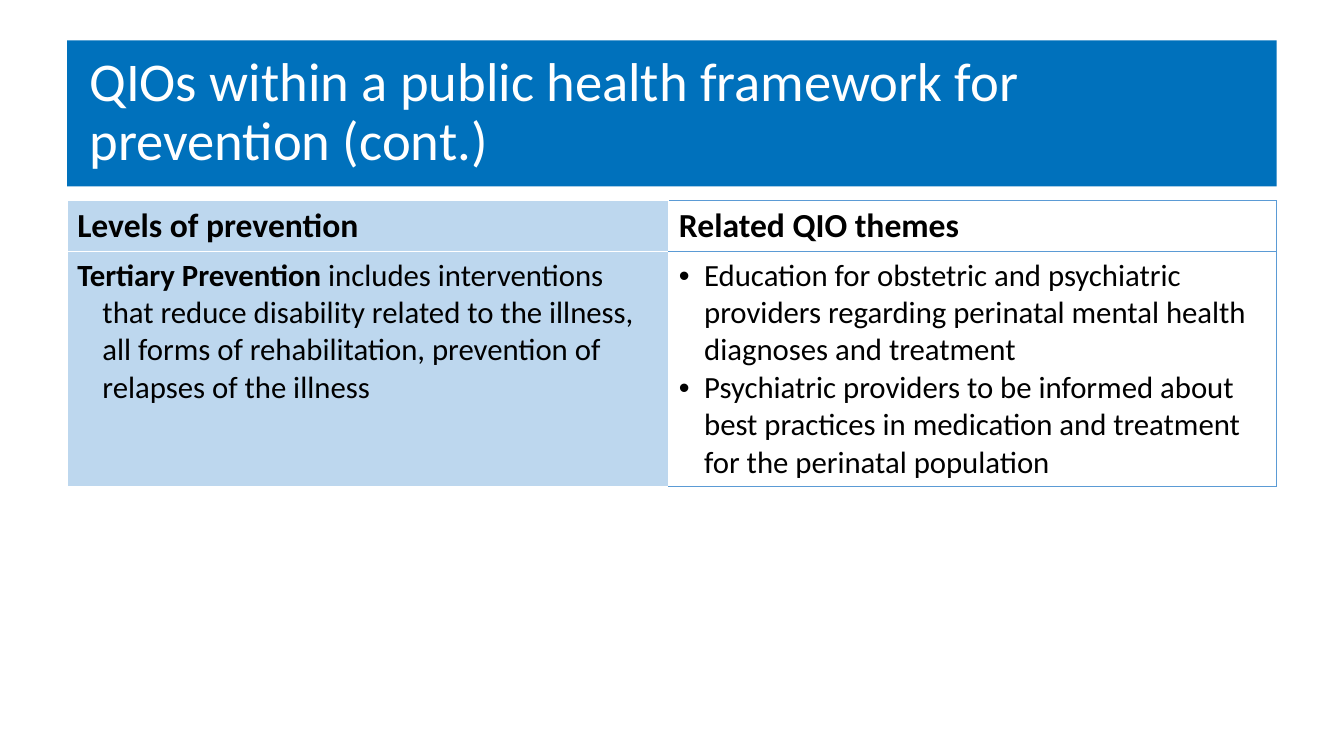
from dataclasses import dataclass

import lxml.etree
import pptx
import pptx.dml.color
import pptx.enum.text
import pptx.oxml.ns
import pptx.util

Pt = pptx.util.Pt
qn = pptx.oxml.ns.qn


@dataclass(frozen=True)
class Theme:
    """Colours, font and type sizes of the slide."""
    font: str = "Calibri"
    banner: str = "0071BC"
    panel: str = "BDD7EE"
    outline: str = "5B9BD5"
    light: str = "FFFFFF"
    dark: str = "000000"
    title_size: int = 39
    header_size: int = 24
    body_size: int = 22
    indent: int = 18


THEME = Theme()
TITLE = "QIOs within a public health framework for prevention (cont.)"
HEADERS = ["Levels of prevention", "Related QIO themes"]
LEVEL = [
    ("Tertiary Prevention ", True),
    ("includes interventions that reduce disability related to the illness, "
     "all forms of rehabilitation, prevention of relapses of the illness", False),
]
THEMES = [
    "Education for obstetric and psychiatric providers regarding perinatal "
    "mental health diagnoses and treatment",
    "Psychiatric providers to be informed about best practices in medication "
    "and treatment for the perinatal population",
]


def rgb(value):
    """Turn a hex string into a colour."""
    return pptx.dml.color.RGBColor.from_string(value)


def add_run(paragraph, text, size, color=THEME.dark, bold=False):
    """Add one formatted run to a paragraph."""
    run = paragraph.add_run()
    run.text = text
    run.font.name = THEME.font
    run.font.size = Pt(size)
    run.font.bold = bold
    run.font.color.rgb = rgb(color)


def indent(paragraph, left, first=0, bullet=None):
    """Set the paragraph's indents and an optional bullet."""
    properties = paragraph._p.get_or_add_pPr()
    properties.set("marL", str(Pt(left)))
    properties.set("indent", str(Pt(first)))
    if bullet:
        lxml.etree.SubElement(properties, qn("a:buFont")).set("typeface", "Arial")
        lxml.etree.SubElement(properties, qn("a:buChar")).set("char", bullet)


def style_cell(cell, fill, outline):
    """Draw the borders of a cell, white on its left side, and fill it."""
    properties = cell._tc.get_or_add_tcPr()
    sides = {"L": THEME.light, "R": outline, "T": outline, "B": outline}
    for side, color in sides.items():
        line = lxml.etree.SubElement(properties, qn(f"a:ln{side}"), w=str(Pt(1)))
        solid = lxml.etree.SubElement(line, qn("a:solidFill"))
        lxml.etree.SubElement(solid, qn("a:srgbClr"), val=color)
    cell.fill.solid()
    cell.fill.fore_color.rgb = rgb(fill)


def add_title(slide, left, top, width, height):
    """Place the title placeholder as a coloured banner."""
    title = slide.shapes.title
    title.left, title.top, title.width, title.height = map(Pt, (left, top, width, height))
    title.fill.solid()
    title.fill.fore_color.rgb = rgb(THEME.banner)
    frame = title.text_frame
    frame.word_wrap = True
    frame.auto_size = pptx.enum.text.MSO_AUTO_SIZE.NONE
    frame.vertical_anchor = pptx.enum.text.MSO_ANCHOR.MIDDLE
    paragraph = frame.paragraphs[0]
    paragraph.alignment = pptx.enum.text.PP_ALIGN.LEFT
    paragraph.line_spacing = 0.9
    indent(paragraph, 8.64)
    add_run(paragraph, TITLE, THEME.title_size, THEME.light)


def add_prevention_table(slide, left, top, width, height):
    """Place the table of prevention levels and related themes."""
    table = slide.shapes.add_table(2, 2, *map(Pt, (left, top, width, height))).table
    level_width, header_height = 429.8, 36.5
    table.columns[0].width = Pt(level_width)
    table.columns[1].width = Pt(width - level_width)
    table.rows[0].height = Pt(header_height)
    table.rows[1].height = Pt(height - header_height)
    for row in range(2):
        style_cell(table.cell(row, 0), THEME.panel, THEME.light)
        style_cell(table.cell(row, 1), THEME.light, THEME.outline)
    for column, header in enumerate(HEADERS):
        paragraph = table.cell(0, column).text_frame.paragraphs[0]
        add_run(paragraph, header, THEME.header_size, bold=True)

    paragraph = table.cell(1, 0).text_frame.paragraphs[0]
    indent(paragraph, THEME.indent, -THEME.indent)
    for text, bold in LEVEL:
        add_run(paragraph, text, THEME.body_size, bold=bold)

    frame = table.cell(1, 1).text_frame
    for index, text in enumerate(THEMES):
        paragraph = frame.add_paragraph() if index else frame.paragraphs[0]
        indent(paragraph, THEME.indent, -THEME.indent, "•")
        add_run(paragraph, text, THEME.body_size)


def main():
    """Build the slide and save it."""
    presentation = pptx.Presentation()
    presentation.slide_width = Pt(960)
    presentation.slide_height = Pt(540)
    slide = presentation.slides.add_slide(presentation.slide_layouts[5])
    left, width = 48, 864
    add_title(slide, left, 28.8, width, 104.4)
    add_prevention_table(slide, left, 143.3, width, 204.5)
    presentation.save("out.pptx")


if __name__ == "__main__":
    main()
